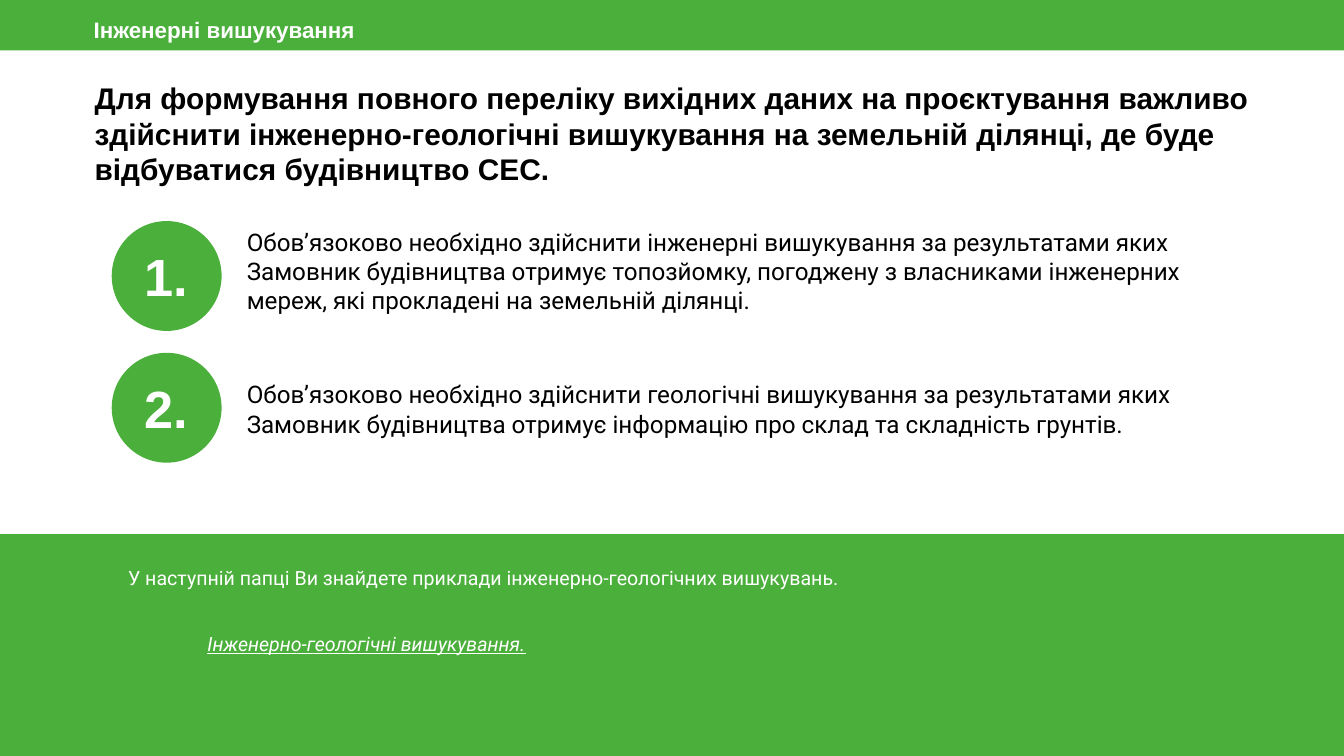
from pptx import Presentation
from pptx.dml.color import RGBColor
from pptx.enum.shapes import MSO_SHAPE
from pptx.enum.text import MSO_ANCHOR, PP_ALIGN
from pptx.util import Pt

OVAL, RECT = MSO_SHAPE.OVAL, MSO_SHAPE.RECTANGLE
TOP, MIDDLE = MSO_ANCHOR.TOP, MSO_ANCHOR.MIDDLE
LEFT, CENTER = PP_ALIGN.LEFT, PP_ALIGN.CENTER

COLORS = {"green": "4BAF3B", "white": "FFFFFF", "black": "000000"}
INSET = 7.2

HEADING = {"name": "Arial", "size": Pt(21.33), "bold": True}
NUMBER = {"name": "Arial", "size": Pt(37.33), "bold": True}
BODY = {"name": "Roboto", "size": Pt(17.33)}
SECTION = {"name": "Arial", "size": Pt(16), "bold": True}
NOTE = {"name": "Roboto", "size": Pt(14)}
LINK = {**NOTE, "italic": True, "underline": True}


class SlideBuilder:
    def __init__(self, slide, colors):
        self.slide = slide
        self.colors = colors

    def color(self, key):
        return RGBColor.from_string(self.colors[key])

    def fill_frame(self, frame, text, font, color, anchor=TOP, align=LEFT,
                   inset_y=INSET, spacing=None):
        frame_format = {
            "word_wrap": True, "vertical_anchor": anchor,
            "margin_left": Pt(INSET), "margin_right": Pt(INSET),
            "margin_top": Pt(inset_y), "margin_bottom": Pt(inset_y),
        }
        for key, value in frame_format.items():
            setattr(frame, key, value)
        paragraph = frame.paragraphs[0]
        paragraph.alignment = align
        paragraph.line_spacing = spacing
        run = paragraph.add_run()
        run.text = text
        for key, value in font.items():
            setattr(run.font, key, value)
        run.font.color.rgb = self.color(color)

    def label(self, box, text, font, color, **layout):
        text_box = self.slide.shapes.add_textbox(*map(Pt, box))
        self.fill_frame(text_box.text_frame, text, font, color, **layout)

    def shape(self, kind, box):
        figure = self.slide.shapes.add_shape(kind, *map(Pt, box))
        figure.shadow.inherit = False
        figure.fill.solid()
        figure.fill.fore_color.rgb = self.color("green")
        figure.line.fill.background()
        return figure

    def band(self, top, height):
        self.shape(RECT, (0, top, 960, height))

    def badge(self, box, number):
        circle = self.shape(OVAL, box)
        self.fill_frame(circle.text_frame, number, NUMBER, "white",
                        anchor=MIDDLE, align=CENTER)


def main():
    presentation = Presentation()
    presentation.slide_width, presentation.slide_height = Pt(960), Pt(540)
    slide = presentation.slides.add_slide(presentation.slide_layouts[6])
    builder = SlideBuilder(slide, COLORS)

    # Main statement
    builder.label(
        (60.5, 72.7, 863.3, 46.8),
        "Для формування повного переліку вихідних даних на проєктування "
        "важливо здійснити інженерно-геологічні вишукування на земельній "
        "ділянці, де буде відбуватися будівництво СЕС.",
        HEADING, "black", anchor=MIDDLE, inset_y=3.6, spacing=0.99)

    # Numbered requirements: badge top, text top, text width, wording
    requirements = [
        (157.9, 170, 730.8,
         "Обов’язоково необхідно здійснити інженерні вишукування за "
         "результатами яких Замовник будівництва отримує топозйомку, "
         "погоджену з власниками інженерних мереж, які прокладені на "
         "земельній ділянці."),
        (252, 268.6, 688.3,
         "Обов’язоково необхідно здійснити геологічні вишукування за "
         "результатами яких Замовник будівництва отримує інформацію про "
         "склад та складність грунтів."),
    ]
    for number, (badge_top, text_top, width, wording) in enumerate(requirements, 1):
        builder.badge((79.8, badge_top, 78.5, 78.5), f"{number}.")
        builder.label((169.2, text_top, width, 46.8), wording, BODY, "black",
                      anchor=MIDDLE)

    # Footer band with the examples
    builder.band(381.6, 169.2)
    builder.label((84.4, 396.7, 823, 54),
                  "У наступній папці Ви знайдете приклади "
                  "інженерно-геологічних вишукувань.", NOTE, "white")
    builder.label((141.1, 444.2, 823, 54),
                  "Інженерно-геологічні вишукування.", LINK, "white")

    # Header band with the section name
    builder.band(0, 36)
    builder.label((59.8, 4.3, 777.6, 36.7), "Інженерні вишукування",
                  SECTION, "white")

    presentation.save("out.pptx")


if __name__ == "__main__":
    main()
